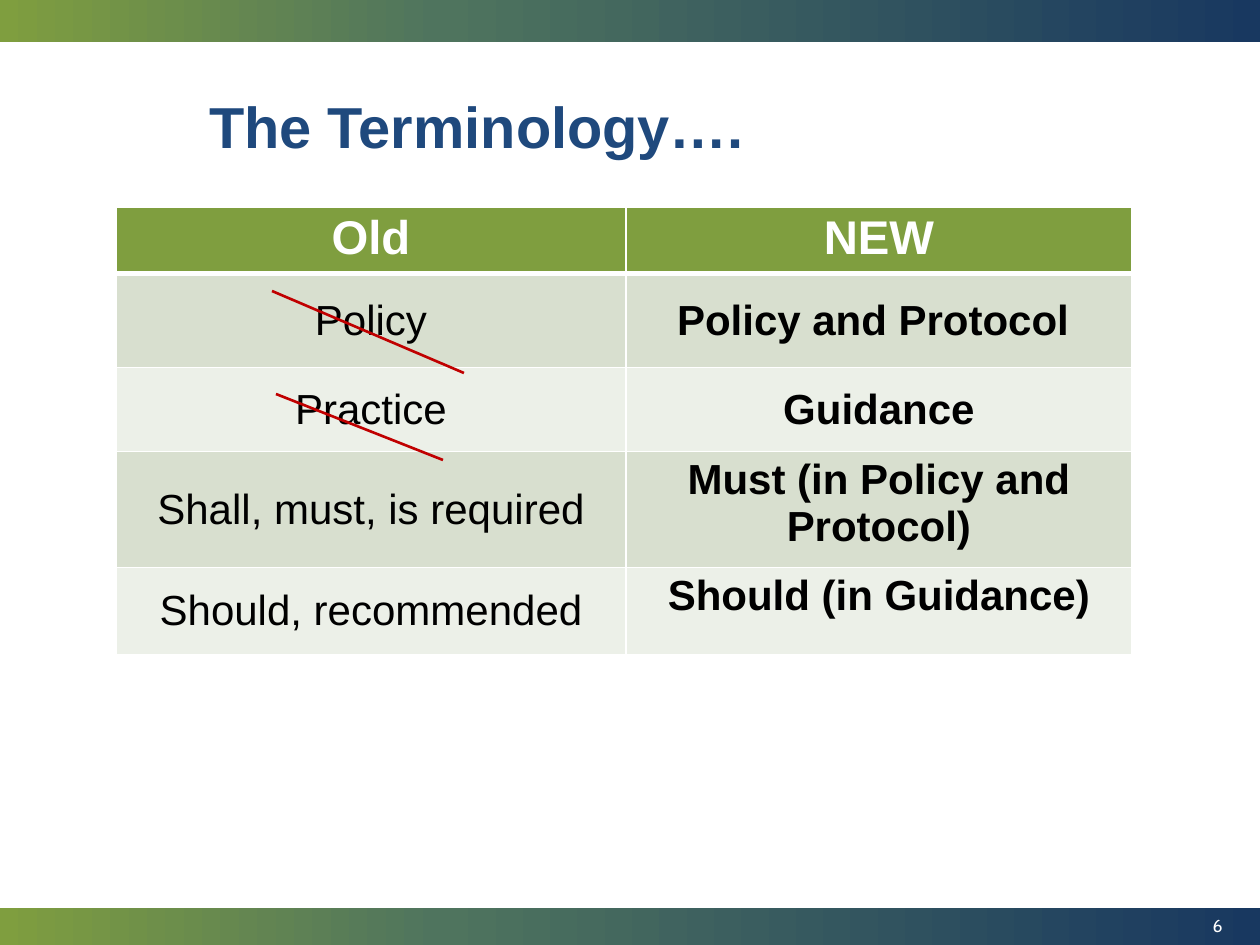
from copy import deepcopy

from lxml.etree import SubElement
from pptx import Presentation
from pptx.dml.color import RGBColor
from pptx.enum.shapes import MSO_CONNECTOR, MSO_SHAPE
from pptx.enum.text import MSO_ANCHOR, PP_ALIGN
from pptx.oxml.ns import qn
from pptx.util import Emu, Pt

GREEN = RGBColor(0x7F, 0x9E, 0x3F)
TEAL = RGBColor(0x4F, 0x74, 0x5E)
NAVY = RGBColor(0x18, 0x38, 0x60)
BLUE = RGBColor(0x1F, 0x49, 0x7D)
RED = RGBColor(0xC0, 0x00, 0x00)
SAGE = RGBColor(0xD8, 0xDF, 0xCF)
PALE = RGBColor(0xEC, 0xF0, 0xE8)
WHITE = RGBColor(0xFF, 0xFF, 0xFF)
BLACK = RGBColor(0x00, 0x00, 0x00)

PX_PER_INCH = 126


def px(n):
    return Emu(round(n * 914400 / PX_PER_INCH))


class Deck:
    font = "Arial"
    band_stops = ((0, GREEN), (0.35, TEAL), (1, NAVY))

    def __init__(self, width, height):
        self.prs = Presentation()
        self.prs.slide_width, self.prs.slide_height = px(width), px(height)
        self.s = self.prs.slides.add_slide(self.prs.slide_layouts[6])

    def style(self, p, size, color, bold=False, font=None):
        for r in p.runs:
            r.font.name = font or self.font
            r.font.size = Pt(size)
            r.font.bold = bold
            r.font.color.rgb = color

    def band(self, y, height):
        """Full-width bar with the three-colour gradient."""
        sp = self.s.shapes.add_shape(
            MSO_SHAPE.RECTANGLE, 0, px(y), self.prs.slide_width, px(height))
        sp.shadow.inherit = False
        sp.line.fill.background()
        sp.fill.gradient()
        sp.fill.gradient_angle = 0
        stops = sp.fill._fill._gradFill.find(qn("a:gsLst"))
        stops.append(deepcopy(stops[-1]))
        for stop, (position, color) in zip(sp.fill.gradient_stops, self.band_stops):
            stop.position = position
            stop.color.rgb = color

    def text(self, x, y, w, h, text, size, color, anchor,
             align=PP_ALIGN.LEFT, spacing=None, **look):
        tf = self.s.shapes.add_textbox(px(x), px(y), px(w), px(h)).text_frame
        tf.word_wrap = True
        tf.vertical_anchor = anchor
        tf.text = text
        p = tf.paragraphs[0]
        p.alignment = align
        p.line_spacing = spacing
        self.style(p, size, color, **look)

    def borders(self, cell, bottom):
        tc_pr = cell._tc.get_or_add_tcPr()
        for side, width in (("L", 1), ("R", 1), ("T", 1), ("B", bottom)):
            ln = SubElement(tc_pr, qn(f"a:ln{side}"), w=str(Pt(width)))
            fill = SubElement(ln, qn("a:solidFill"))
            SubElement(fill, qn("a:srgbClr"), val=str(WHITE))

    def cell(self, cell, text, fill, size, color, bold, anchor, bottom=1):
        self.borders(cell, bottom)
        cell.fill.solid()
        cell.fill.fore_color.rgb = fill
        cell.margin_left = cell.margin_right = px(9)
        cell.margin_top = cell.margin_bottom = px(5)
        cell.vertical_anchor = anchor
        cell.text = text
        p = cell.text_frame.paragraphs[0]
        p.alignment = PP_ALIGN.CENTER
        self.style(p, size, color, bold)
        return p

    def table(self, x, y, widths, heights, rows):
        """First row is the header; the right column is bold."""
        table = self.s.shapes.add_table(
            len(rows), len(widths), px(x), px(y),
            px(sum(widths)), px(sum(heights))).table
        for column, width in zip(table.columns, widths):
            column.width = px(width)
        for i, (row, height) in enumerate(zip(rows, heights)):
            table.rows[i].height = px(height)
            for j, text in enumerate(row):
                cell = table.cell(i, j)
                if i == 0:
                    self.cell(cell, text, GREEN, 27, WHITE, True, MSO_ANCHOR.TOP, 3)
                    continue
                top = j == 1 and i > 2
                self.cell(cell, text, SAGE if i % 2 else PALE, 24, BLACK, j == 1,
                          MSO_ANCHOR.TOP if top else MSO_ANCHOR.MIDDLE)
        return table

    def strike(self, x1, y1, x2, y2):
        line = self.s.shapes.add_connector(
            MSO_CONNECTOR.STRAIGHT, px(x1), px(y1), px(x2), px(y2))
        line.line.color.rgb = RED
        line.line.width = Pt(1.5)
        SubElement(line._element.spPr, qn("a:effectLst"))


def main():
    deck = Deck(1260, 945)
    deck.band(908, 38)
    deck.band(-2, 44)
    deck.text(197, 83, 815, 84, "The Terminology….", 33, BLUE,
              MSO_ANCHOR.BOTTOM, spacing=0.9, bold=True)
    deck.text(951, 916, 284, 19, "6", 10, WHITE, MSO_ANCHOR.MIDDLE,
              PP_ALIGN.RIGHT, font="Cabin")
    table = deck.table(116, 207, (510, 506), (63, 94, 84, 116, 87), (
        ("Old", "NEW"),
        ("Policy", "Policy and Protocol "),
        ("Practice", "Guidance"),
        ("Shall, must, is required", "Must (in Policy and Protocol)"),
        ("Should, recommended", "Should (in Guidance)"),
    ))
    table.cell(3, 0).text_frame.paragraphs[0].space_before = Pt(12)
    deck.strike(272, 291, 464, 373)
    deck.strike(276, 394, 443, 460)
    deck.prs.save("out.pptx")


if __name__ == "__main__":
    main()
